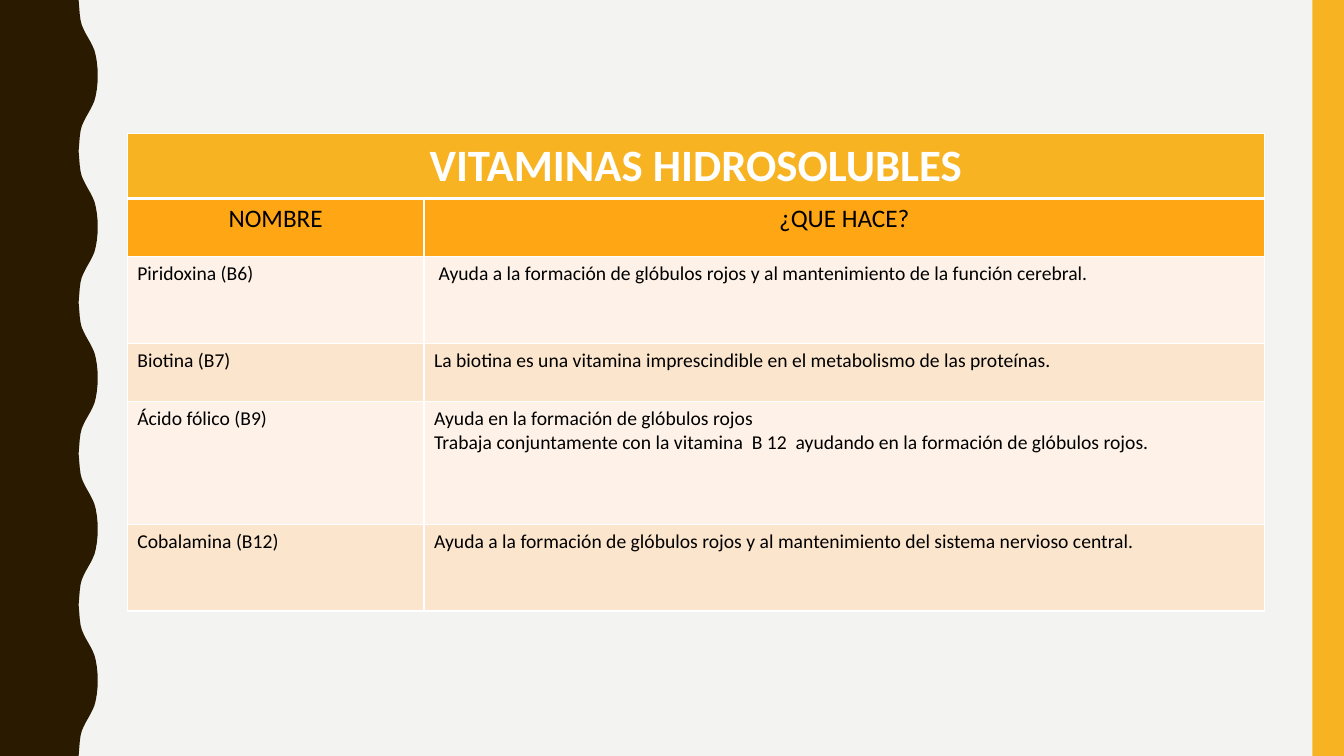
from lxml import etree
from pptx import Presentation, util as u
from pptx.dml.color import RGBColor
from pptx.enum import shapes, text
from pptx.oxml import ns

HUES = {"page": "F3F3F2", "wave": "2A1A00", "gold": "F8B323", "head": "FFA615",
        "pale": "FEF2E8", "peach": "FCE5CD", "white": "FFFFFF", "black": "000000"}
FONT = "Calibri"
TITLE = "VITAMINAS HIDROSOLUBLES"
HEADS = ("NOMBRE", "¿QUE HACE?")
ROWS = [
    ("Piridoxina (B6)", " Ayuda a la formación de glóbulos rojos y al mantenimiento de la función cerebral."),
    ("Biotina (B7)", "La biotina es una vitamina imprescindible en el metabolismo de las proteínas."),
    ("Ácido fólico (B9)", "Ayuda en la formación de glóbulos rojos\n"
     "Trabaja conjuntamente con la vitamina  B 12  ayudando en la formación de glóbulos rojos."),
    ("Cobalamina (B12)", "Ayuda a la formación de glóbulos rojos y al mantenimiento del sistema nervioso central."),
]
COLS = (212, 600.4)
TALL = (46.4, 41.6, 61.8, 41.6, 87.8, 61.8)
CURVE = [(0, 0), (0.4, 5), (0.8, 10), (1.4, 14.5), (2.3, 18), (3.6, 21), (5.1, 24),
         (6.8, 27), (8.5, 30), (10, 33), (11.3, 36), (12.2, 39.5), (13, 44),
         (13.5, 49), (13.6, 54)]


def hue(name):
    return RGBColor.from_string(HUES[name])


def paint(shape, name):
    shape.shadow.inherit = False
    shape.fill.solid()
    shape.fill.fore_color.rgb = hue(name)
    shape.line.fill.background()


def wave(slide, left, top, width, height):
    half = CURVE[-1][1]
    base = left + width - CURVE[-1][0]
    edge = []
    for k in range(round(height / half)):
        bend = CURVE if k % 2 == 0 else [(x, half - y) for x, y in reversed(CURVE)]
        edge += [(base + x, top + k * half + y) for x, y in bend]
    spots = edge + [(left, top + height)]
    form = slide.shapes.build_freeform(u.Pt(left), u.Pt(top))
    form.add_line_segments([(u.Pt(x), u.Pt(y)) for x, y in spots], close=True)
    paint(form.convert_to_shape(), "wave")


def strip(slide, left, top, width, height):
    box = [u.Pt(n) for n in (left, top, width, height)]
    paint(slide.shapes.add_shape(shapes.MSO_SHAPE.RECTANGLE, *box), "gold")


def border(cell, top, foot):
    props = cell._tc.get_or_add_tcPr()
    for k, (side, wide) in enumerate(zip("LRTB", (1, 1, top, foot))):
        line = etree.Element(ns.qn("a:ln" + side), w=str(u.Pt(wide)))
        fill = etree.SubElement(line, ns.qn("a:solidFill"))
        etree.SubElement(fill, ns.qn("a:srgbClr"), val=HUES["white"])
        props.insert(k, line)


def write(cell, words, size, ink, fill, mid=False, bold=False):
    cell.fill.solid()
    cell.fill.fore_color.rgb = hue(fill)
    cell.text_frame.text = words
    for par in cell.text_frame.paragraphs:
        par.alignment = text.PP_ALIGN.CENTER if mid else text.PP_ALIGN.LEFT
        for run in par.runs:
            run.font.name = FONT
            run.font.size = u.Pt(size)
            run.font.bold = bold
            run.font.color.rgb = hue(ink)


def table(slide, left, top):
    box = [u.Pt(n) for n in (left, top, sum(COLS), sum(TALL))]
    grid = slide.shapes.add_table(len(TALL), len(COLS), *box).table
    for col, wide in zip(grid.columns, COLS):
        col.width = u.Pt(wide)
    for row, high in zip(grid.rows, TALL):
        row.height = u.Pt(high)
    grid.cell(0, 0).merge(grid.cell(0, 1))
    write(grid.cell(0, 0), TITLE, 32, "white", "gold", True, True)
    for c, words in enumerate(HEADS):
        write(grid.cell(1, c), words, 18, "black", "head", True)
    for r, pair in enumerate(ROWS):
        for c, words in enumerate(pair):
            write(grid.cell(r + 2, c), words, 14, "black", ("pale", "peach")[r % 2])
    for r in range(len(TALL)):
        for c in range(len(COLS)):
            border(grid.cell(r, c), 3 if r == 1 else 1, 3 if r == 0 else 1)


def main():
    deck = Presentation()
    deck.slide_width, deck.slide_height = u.Pt(960), u.Pt(540)
    slide = deck.slides.add_slide(deck.slide_layouts[6])
    slide.background.fill.solid()
    slide.background.fill.fore_color.rgb = hue("page")
    wave(slide, 0, 0, 69.8, 540)
    strip(slide, 937.5, 0, 22.5, 540)
    table(slide, 90.9, 95.5)
    deck.save("out.pptx")


if __name__ == "__main__":
    main()
